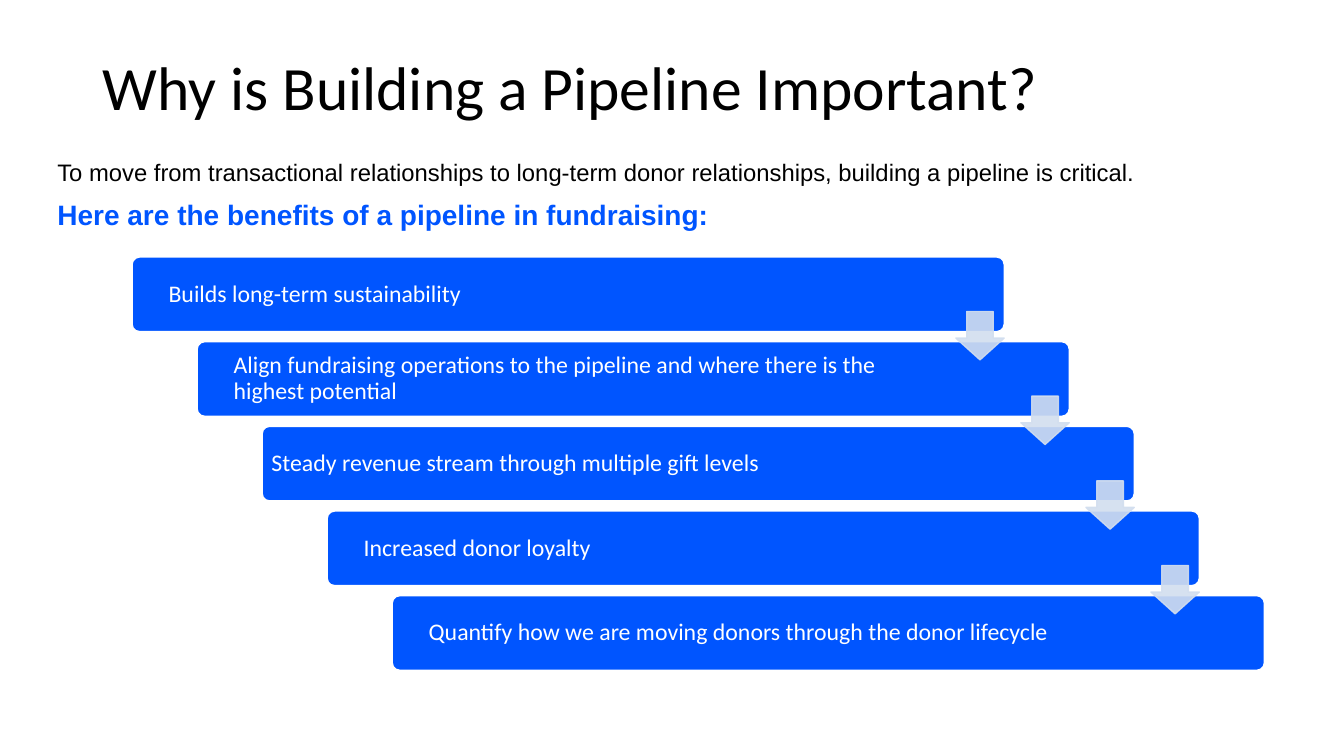
import pptx
import pptx.dml.color
import pptx.enum.shapes
import pptx.enum.text
import pptx.oxml.ns
import pptx.util
from lxml import etree
from pptx.util import Inches

COLORS = {"blue": "0055FF", "pale": "D2DEEF", "white": "FFFFFF", "black": "000000"}
BENEFITS = [
    ("Builds long-term sustainability", 0.34),
    ("Align fundraising operations to the pipeline and where there is the highest potential", 0.34),
    ("Steady revenue stream through multiple gift levels", 0.07),
    ("Increased donor loyalty", 0.34),
    ("Quantify how we are moving donors through the donor lifecycle", 0.34),
]
STEP_X, STEP_Y = 0.645, 0.84


def rgb(name):
    """Return the named colour."""
    return pptx.dml.color.RGBColor.from_string(COLORS[name])


def write(p, text, size=17, font="Calibri", color="black", bold=False, before=0):
    """Put formatted text in a paragraph."""
    p.alignment = pptx.enum.text.PP_ALIGN.LEFT
    p.line_spacing = 0.9
    p.space_before = pptx.util.Pt(before)
    r = p.add_run()
    r.text = text
    r.font.size = pptx.util.Pt(size)
    r.font.name = font
    r.font.bold = bold
    r.font.color.rgb = rgb(color)


def add_text_box(s, left, top, width, height, anchor):
    """Add a wrapping text box and return its text frame."""
    tf = s.shapes.add_textbox(Inches(left), Inches(top), Inches(width), Inches(height)).text_frame
    tf.word_wrap = True
    tf.vertical_anchor = anchor
    return tf


def add_block(s, kind, left, top, width, height, adjustments, fill, line):
    """Add a filled and outlined preset shape."""
    sp = s.shapes.add_shape(kind, Inches(left), Inches(top), Inches(width), Inches(height))
    sp.shadow.inherit = False
    for i, value in enumerate(adjustments):
        sp.adjustments[i] = value
    sp.fill.solid()
    sp.fill.fore_color.rgb = rgb(fill)
    sp.line.color.rgb = rgb(line)
    sp.line.width = pptx.util.Pt(1)
    return sp


def add_benefit(s, left, top, text, inset):
    """Add one step of the staircase."""
    sp = add_block(s, pptx.enum.shapes.MSO_SHAPE.ROUNDED_RECTANGLE,
                   left, top, 8.65, 0.74, [0.1], "blue", "white")
    tf = sp.text_frame
    tf.word_wrap = True
    tf.vertical_anchor = pptx.enum.text.MSO_ANCHOR.MIDDLE
    tf.margin_left, tf.margin_right = Inches(inset), Inches(1.17)
    tf.margin_top = tf.margin_bottom = Inches(0.04)
    write(tf.paragraphs[0], text, color="white")


def add_down_arrow(s, left, top):
    """Add a translucent arrow leading to the next step."""
    sp = add_block(s, pptx.enum.shapes.MSO_SHAPE.DOWN_ARROW,
                   left, top, 0.48, 0.48, [0.55, 0.45], "pale", "pale")
    qn = pptx.oxml.ns.qn
    for color in sp.element.spPr.iter(qn("a:srgbClr")):
        etree.SubElement(color, qn("a:alpha"), val="90000")


def main():
    """Build the slide and save it."""
    prs = pptx.Presentation()
    prs.slide_width, prs.slide_height = Inches(13.33), Inches(7.5)
    s = prs.slides.add_slide(prs.slide_layouts[6])
    anchors = pptx.enum.text.MSO_ANCHOR

    tf = add_text_box(s, 0.92, 0.43, 11.99, 0.93, anchors.MIDDLE)
    write(tf.paragraphs[0], "Why is Building a Pipeline Important?", size=44)

    tf = add_text_box(s, 0.47, 1.55, 12.65, 0.9, anchors.TOP)
    write(tf.paragraphs[0], "To move from transactional relationships to long-term donor "
          "relationships, building a pipeline is critical.", font="Arial")
    write(tf.add_paragraph(), "Here are the benefits of a pipeline in fundraising:",
          size=20, font="Arial", color="blue", bold=True, before=10)

    for i, (text, inset) in enumerate(BENEFITS):
        add_benefit(s, 1.31 + i * STEP_X, 2.55 + i * STEP_Y, text, inset)
    for i in range(len(BENEFITS) - 1):
        add_down_arrow(s, 9.48 + i * STEP_X, 3.09 + i * STEP_Y)

    prs.save("out.pptx")


if __name__ == "__main__":
    main()
